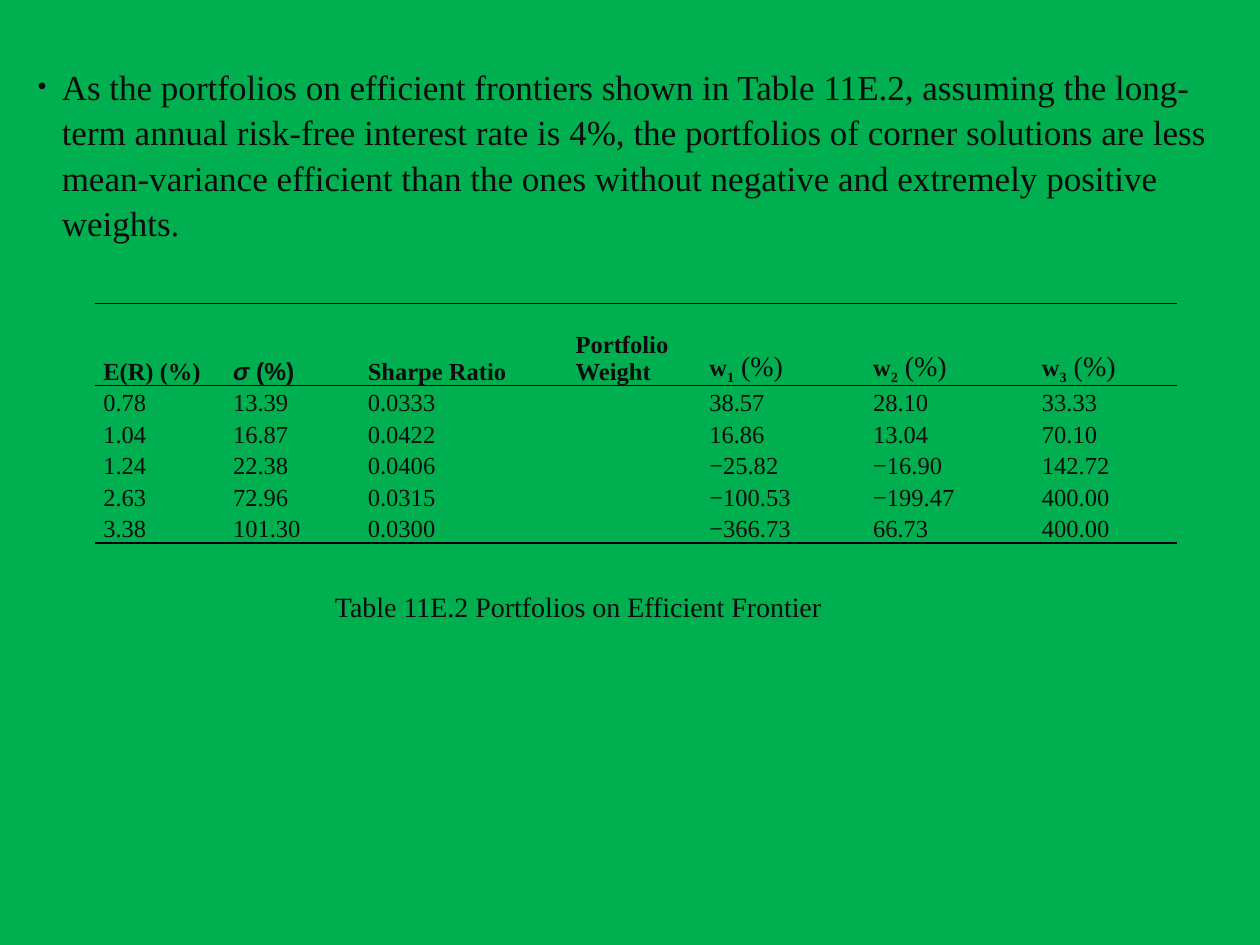
from lxml import etree
from pptx import Presentation, util as u
from pptx.dml import color
from pptx.enum import text
from pptx.oxml import ns

WIDTH, HEIGHT = 10, 7.5
GREEN, INK, BLACK = "00B050", "0C0C0C", "000000"
SERIF, SANS = "Times New Roman", "Arial"

COLUMNS = [1.03, 1.07, 1.65, 1.06, 1.3, 1.34, 1.14]
HEADER_HEIGHT, ROW_HEIGHT = 0.65, 0.25
ROWS = [
    ["0.78", "13.39", "0.0333", "", "38.57", "28.10", "33.33"],
    ["1.04", "16.87", "0.0422", "", "16.86", "13.04", "70.10"],
    ["1.24", "22.38", "0.0406", "", "−25.82", "−16.90", "142.72"],
    ["2.63", "72.96", "0.0315", "", "−100.53", "−199.47", "400.00"],
    ["3.38", "101.30", "0.0300", "", "−366.73", "66.73", "400.00"],
]


def rgb(value):
    return color.RGBColor.from_string(value)


def element(parent, tag, **attributes):
    return etree.SubElement(parent, ns.qn(tag), attributes)


def write(paragraph, words, size=14, font=SERIF, bold=False, italic=False, baseline=None):
    """Add one formatted run; an empty one only sets the line's size."""
    if not words:
        element(paragraph._p, "a:endParaRPr", sz=str(size * 100))
        return
    run = paragraph.add_run()
    run.text = words
    run.font.size, run.font.name = u.Pt(size), font
    run.font.bold, run.font.italic = bold, italic
    run.font.color.rgb = rgb(INK)
    if baseline:
        run.font._element.set("baseline", str(baseline * 1000))


def weight_heading(number):
    return [("w", {"bold": True}), (str(number), {"bold": True, "baseline": -25}),
            (" (%)", {"size": 16})]


def headings():
    bold = {"bold": True}
    return [
        [("E(R) (%)", bold)],
        [("σ", {"bold": True, "italic": True, "font": SANS}),
         (" (%)", {"bold": True, "font": SANS})],
        [("Sharpe Ratio", bold)],
        [("Portfolio Weight", bold)],
        *[weight_heading(number) for number in (1, 2, 3)],
    ]


def set_borders(cell, ruled):
    """Rule the named sides in black and clear the others."""
    properties = cell._tc.get_or_add_tcPr()
    for side in "LRTB":
        if side in ruled:
            line = element(properties, f"a:ln{side}", w=str(u.Pt(1)))
            fill = element(line, "a:solidFill")
            element(fill, "a:srgbClr", val=BLACK)
        else:
            line = element(properties, f"a:ln{side}", w="0")
            element(line, "a:noFill")


def add_statement(slide, left, top, width, height):
    shape = slide.placeholders[1]
    shape.left, shape.top = u.Inches(left), u.Inches(top)
    shape.width, shape.height = u.Inches(width), u.Inches(height)
    paragraph = shape.text_frame.paragraphs[0]
    paragraph.line_spacing, paragraph.space_before = u.Pt(26), u.Pt(0)
    properties = paragraph._p.get_or_add_pPr()
    properties.set("marL", str(u.Inches(0.19)))
    properties.set("indent", str(u.Inches(-0.19)))
    element(properties, "a:buSzPct", val="70000")
    element(properties, "a:buChar", char="•")
    write(paragraph, "As the portfolios on efficient frontiers shown in Table 11E.2, assuming "
          "the long-term annual risk-free interest rate is 4%, the portfolios of corner "
          "solutions are less mean-variance efficient than the ones without negative and "
          "extremely positive weights.", size=20)


def add_portfolios(slide, left, top):
    body = [[[(value, {})] for value in row] for row in ROWS]
    contents = [headings()] + body
    height = HEADER_HEIGHT + ROW_HEIGHT * len(ROWS)
    table = slide.shapes.add_table(
        len(contents), len(COLUMNS), u.Inches(left), u.Inches(top),
        u.Inches(sum(COLUMNS)), u.Inches(height)).table
    table.first_row = table.horz_banding = False
    for column, width in zip(table.columns, COLUMNS):
        column.width = u.Inches(width)
    for index, cells in enumerate(contents):
        table.rows[index].height = u.Inches(ROW_HEIGHT if index else HEADER_HEIGHT)
        ruled = {0: "TB", 1: "T", len(ROWS): "B"}.get(index, "")
        for cell, runs in zip(table.rows[index].cells, cells):
            cell.margin_left = cell.margin_right = u.Inches(0.07)
            cell.margin_top = cell.margin_bottom = 0
            cell.vertical_anchor = text.MSO_ANCHOR.BOTTOM
            set_borders(cell, ruled)
            cell.fill.background()
            paragraph = cell.text_frame.paragraphs[0]
            paragraph.alignment = text.PP_ALIGN.JUSTIFY
            for words, style in runs:
                write(paragraph, words, **style)


def add_caption(slide, left, top, width, height):
    box = slide.shapes.add_textbox(*map(u.Inches, (left, top, width, height)))
    frame = box.text_frame
    frame.word_wrap = True
    frame.vertical_anchor = text.MSO_ANCHOR.MIDDLE
    write(frame.paragraphs[0], "Table 11E.2 Portfolios on Efficient Frontier", size=16)


def main():
    presentation = Presentation()
    presentation.slide_width, presentation.slide_height = u.Inches(WIDTH), u.Inches(HEIGHT)
    slide = presentation.slides.add_slide(presentation.slide_layouts[1])
    slide.background.fill.solid()
    slide.background.fill.fore_color.rgb = rgb(GREEN)

    # The slide has no title
    title = slide.shapes.title._element
    title.getparent().remove(title)

    # Statement, table and caption from top to bottom
    add_statement(slide, 0.2, 0.44, 9.61, 6.61)
    add_portfolios(slide, 0.75, 2.41)
    add_caption(slide, 2.56, 4.62, 4.49, 0.39)

    presentation.save("out.pptx")


if __name__ == "__main__":
    main()
